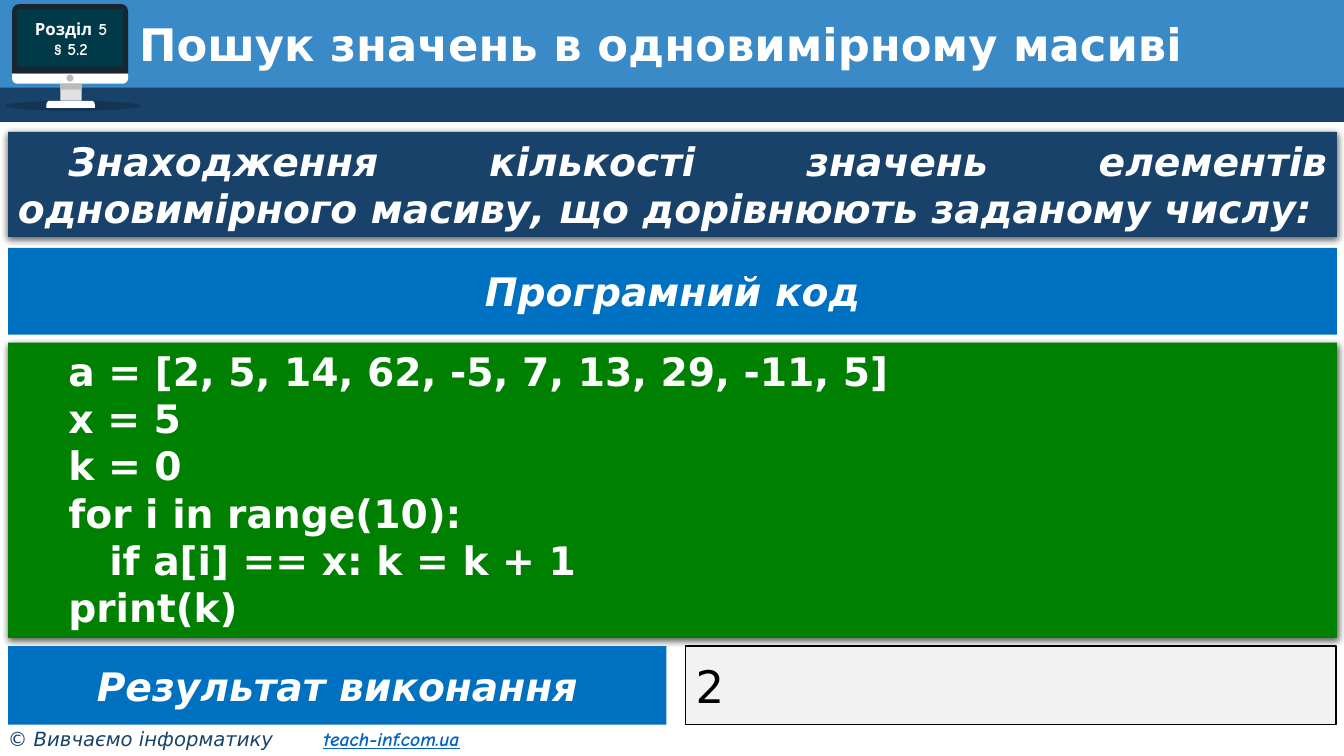
from lxml.etree import SubElement
from pptx import Presentation
from pptx.dml.color import RGBColor
from pptx.enum.shapes import MSO_SHAPE
from pptx.enum.text import MSO_ANCHOR, MSO_AUTO_SIZE, PP_ALIGN
from pptx.oxml.ns import qn
from pptx.util import Inches, Pt

COLORS = {
    "sky": "398AC7", "navy": "19426B", "blue": "0070C0", "green": "008000",
    "white": "FFFFFF", "black": "000000", "pale": "F2F2F2", "link": "0563C1",
    "casing": "182632", "screen": "003948", "stand": "E1E1E1", "grey": "BBBBBB",
}
MAIN_FONT = "DejaVu Sans"
SMALL_FONT = "Comic Neue"
MARGIN = 0.08
CONTENT_WIDTH = 13.18
CODE = [
    "a = [2, 5, 14, 62, -5, 7, 13, 29, -11, 5]",
    "x = 5",
    "k = 0",
    "for i in range(10):",
    "   if a[i] == x: k = k + 1",
    "print(k)",
]


def color(name):
    return RGBColor.from_string(COLORS[name])


def add_block(slide, box, fill, kind=MSO_SHAPE.RECTANGLE, adjustments=(), line=None):
    shape = slide.shapes.add_shape(kind, *map(Inches, box))
    shape.shadow.inherit = False
    for index, value in enumerate(adjustments):
        shape.adjustments[index] = value
    shape.fill.solid()
    shape.fill.fore_color.rgb = color(fill)
    if line:
        shape.line.color.rgb = color(line)
        shape.line.width = Pt(1)
    else:
        shape.line.fill.background()
    return shape


def style_span(span, size, name="white", font=MAIN_FONT, bold=True, italic=False):
    span.font.size = Pt(size)
    span.font.name = font
    span.font.bold = bold
    span.font.italic = italic
    span.font.color.rgb = color(name)


def write(shape, lines, size, align=PP_ALIGN.LEFT, anchor=MSO_ANCHOR.MIDDLE, indent=0, **style):
    frame = shape.text_frame
    frame.word_wrap = True
    frame.vertical_anchor = anchor
    frame.text = "\n".join(lines)
    for para in frame.paragraphs:
        para.alignment = align
        if indent:
            para._p.get_or_add_pPr().set("indent", str(Inches(indent)))
        for span in para.runs:
            style_span(span, size, **style)


def set_alpha(shape, percent):
    fill = shape.fill.fore_color._xFill
    SubElement(fill[0], qn("a:alpha"), val=str(percent * 1000))


def add_soft_shadow(shape):
    effects = shape._element.spPr.find(qn("a:effectLst"))
    shadow = SubElement(effects, qn("a:outerShdw"), blurRad=str(Pt(4.5)),
                        dist=str(Pt(1.5)), dir="5400000", algn="ctr", rotWithShape="0")
    tint = SubElement(shadow, qn("a:srgbClr"), val=COLORS["black"])
    SubElement(tint, qn("a:alpha"), val="63000")


def add_monitor(slide, left, top):
    def part(x, y, width, height, fill, kind=MSO_SHAPE.RECTANGLE, adjustments=()):
        return add_block(slide, (left + x, top + y, width, height), fill, kind, adjustments)

    rounded = MSO_SHAPE.ROUND_2_SAME_RECTANGLE
    set_alpha(part(0, 0.96, 1.34, 0.1, "black", MSO_SHAPE.OVAL), 20)
    part(0.07, 0, 1.15, 0.69, "casing", rounded, (0.1, 0))
    part(0.07, 0.69, 1.15, 0.1, "white", rounded, (0, 0.5))
    part(0.55, 0.79, 0.21, 0.17, "stand")
    part(0.55, 0.79, 0.21, 0.06, "grey")
    part(0.41, 0.96, 0.48, 0.07, "white", rounded, (0.5, 0))
    part(0.61, 0.7, 0.07, 0.07, "grey", MSO_SHAPE.OVAL)
    part(0.12, 0.05, 1.05, 0.57, "screen", MSO_SHAPE.ROUNDED_RECTANGLE, (0.04,))
    label = slide.shapes.add_textbox(*map(Inches, (left + 0.08, top + 0.05, 1.15, 0.59)))
    write(label, ["Розділ 5", "§ 5.2"], 12, PP_ALIGN.CENTER, font=SMALL_FONT)


def add_header(slide, width):
    add_block(slide, (0, 0, width, 0.91), "sky")
    add_block(slide, (0, 0.87, width, 0.34), "navy")
    add_monitor(slide, 0.05, 0.04)
    title = slide.shapes.title
    title.left, title.top, title.width, title.height = map(Inches, (1.28, 0.18, 11.72, 0.58))
    write(title, ["Пошук значень в одновимірному масиві"], 32)
    title.text_frame.auto_size = MSO_AUTO_SIZE.NONE
    title.text_frame.paragraphs[0].line_spacing = 0.9
    title.element.getparent().append(title.element)


def add_shaded_text(slide, top, height, fill, lines, italic):
    panel = add_block(slide, (MARGIN, top, CONTENT_WIDTH, height), fill)
    add_soft_shadow(panel)
    write(panel, lines, 28, PP_ALIGN.JUSTIFY, MSO_ANCHOR.TOP, 0.5, italic=italic)


def add_caption(slide, box, caption):
    write(add_block(slide, box, "blue"), [caption], 28, PP_ALIGN.CENTER, italic=True)


def add_result(slide, top, height):
    add_caption(slide, (MARGIN, top, 6.53, height), "Результат виконання")
    answer = add_block(slide, (6.8, top, 6.45, height), "pale", line="black")
    write(answer, ["2"], 32, name="black", bold=False)


def add_footer(slide, box):
    footer = slide.shapes.add_textbox(*map(Inches, box))
    footer.text_frame.word_wrap = True
    para = footer.text_frame.paragraphs[0]
    tabs = SubElement(para._p.get_or_add_pPr(), qn("a:tabLst"))
    SubElement(tabs, qn("a:tab"), pos=str(Inches(3.13)), algn="l")
    credit = para.add_run()
    credit.text = "© Вивчаємо інформатику\t"
    style_span(credit, 14, "navy", bold=False, italic=True)
    site = para.add_run()
    site.text = "teach-inf.com.ua"
    style_span(site, 14, "link", SMALL_FONT, italic=True)
    site.font.underline = True


def main():
    deck = Presentation()
    deck.slide_width, deck.slide_height = Inches(13.33), Inches(7.5)
    slide = deck.slides.add_slide(deck.slide_layouts[5])
    add_header(slide, 13.33)
    add_footer(slide, (-0.02, 7.16, 5.23, 0.34))
    task = "Знаходження кількості значень елементів одновимірного масиву, що дорівнюють заданому числу:"
    add_shaded_text(slide, 1.31, 1.04, "navy", [task], True)
    add_caption(slide, (MARGIN, 2.46, CONTENT_WIDTH, 0.86), "Програмний код")
    add_shaded_text(slide, 3.4, 2.93, "green", CODE, False)
    add_result(slide, 6.41, 0.78)
    deck.save("out.pptx")


if __name__ == "__main__":
    main()
